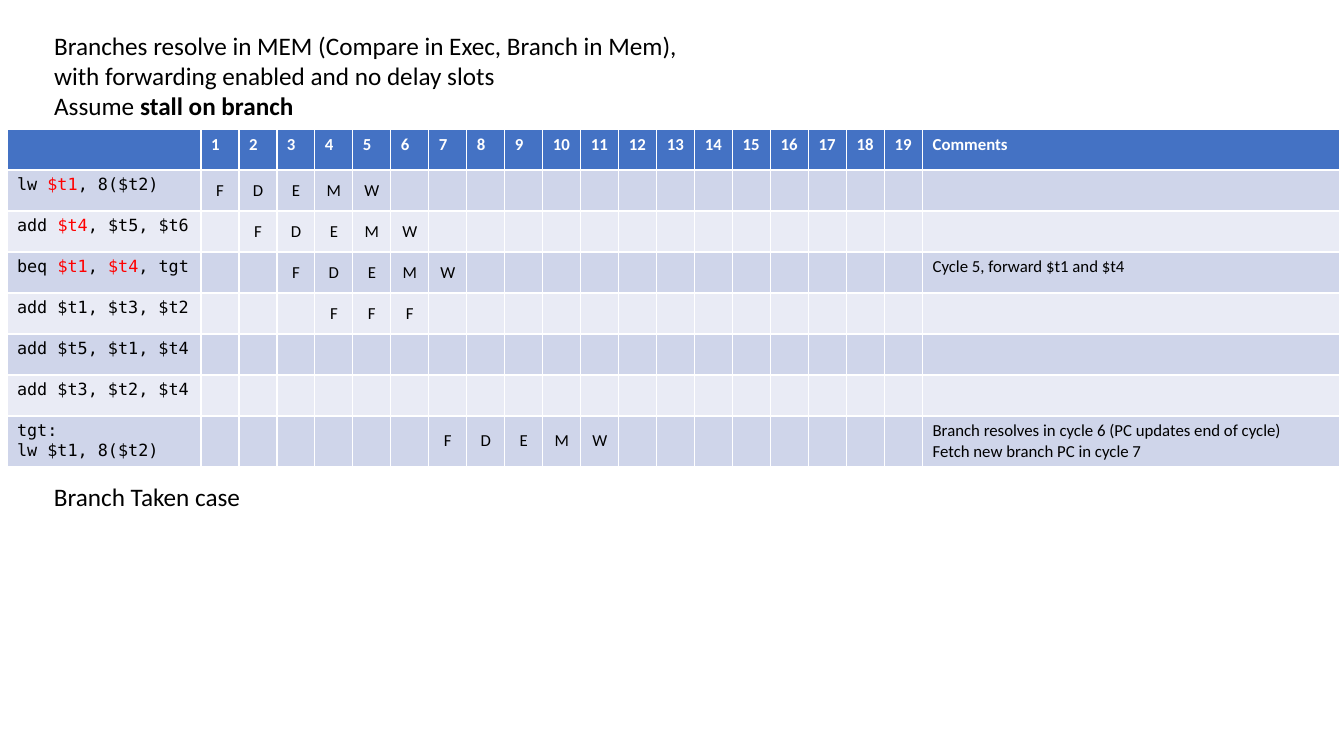
from pptx import Presentation
from pptx.dml.color import RGBColor
from pptx.enum.text import MSO_ANCHOR as Anchor, MSO_AUTO_SIZE as AutoSize, PP_ALIGN as Align
from pptx.util import Emu, Pt

# Asterisks enclose the accented part of a line.
HEADING = ("Branches resolve in MEM (Compare in Exec, Branch in Mem), \n"
           "with forwarding enabled and no delay slots\n"
           "Assume *stall on branch*")
CAPTION = "Branch Taken case"
CYCLES = 19
# instruction, first cycle, stages, comment
PIPELINE = [
    ("lw *$t1*, 8($t2)", 1, "FDEMW", ""),
    ("add *$t4*, $t5, $t6", 2, "FDEMW", ""),
    ("beq *$t1*, *$t4*, tgt", 3, "FDEMW", "Cycle 5, forward $t1 and $t4"),
    ("add $t1, $t3, $t2", 4, "FFF", ""),
    ("add $t5, $t1, $t4", 1, "", ""),
    ("add $t3, $t2, $t4", 1, "", ""),
    ("tgt: \nlw $t1, 8($t2)", 7, "FDEMW",
     "Branch resolves in cycle 6 (PC updates end of cycle)\n"
     "Fetch new branch PC in cycle 7"),
]
COLORS = {"header": "4472C4", "odd": "CFD5EA", "even": "E9EBF5",
          "white": "FFFFFF", "black": "000000", "red": "FF0000"}
SANS, MONO = "Calibri", "DejaVu Sans Mono"

# Lengths in px
PAGE = (1344, 756)
HEADING_BOX = (44, 25, 656, 102)
CAPTION_BOX = (44, 476, 209, 40)
TABLE_LEFT, TABLE_TOP, ROW_HEIGHT = 7, 129, 41
COLUMN_WIDTHS = [194] + [38] * CYCLES + [417]


def px(length):
    return Emu(round(length * 914400 / 100.8))


def color(name):
    return RGBColor.from_string(COLORS[name])


def write(para, text, size, font=SANS, ink="black", accent=None):
    """Fill a paragraph; accent formats the font of each part between asterisks."""
    para.font.size = Pt(size)
    para.font.name = font
    para.font.color.rgb = color(ink)
    for part, piece in enumerate(text.split("*")):
        for line, words in enumerate(piece.split("\n")):
            if line:
                para.add_line_break()
            if words:
                span = para.add_run()
                span.text = words
                if part % 2:
                    accent(span.font)


def make_bold(font):
    font.bold = True


def make_red(font):
    font.color.rgb = color("red")


def set_text_box(box, place, text):
    box.left, box.top, box.width, box.height = map(px, place)
    frame = box.text_frame
    frame.word_wrap = False
    frame.auto_size = AutoSize.SHAPE_TO_FIT_TEXT
    frame.vertical_anchor = Anchor.TOP
    para = frame.paragraphs[0]
    para.alignment = Align.LEFT
    write(para, text, 18, accent=make_bold)


def fill_cell(cell, fill, text, **style):
    cell.fill.solid()
    cell.fill.fore_color.rgb = color(fill)
    write(cell.text_frame.paragraphs[0], text, 12, **style)


def add_pipeline_table(page):
    rows, columns = len(PIPELINE) + 1, len(COLUMN_WIDTHS)
    table = page.shapes.add_table(
        rows, columns, px(TABLE_LEFT), px(TABLE_TOP),
        px(sum(COLUMN_WIDTHS)), px(rows * ROW_HEIGHT)).table
    for column, width in zip(table.columns, COLUMN_WIDTHS):
        column.width = px(width)
    for row in table.rows:
        row.height = px(ROW_HEIGHT)

    titles = ["", *map(str, range(1, CYCLES + 1)), "Comments"]
    for column, title in enumerate(titles):
        cell = table.cell(0, column)
        fill_cell(cell, "header", title, ink="white")
        cell.text_frame.paragraphs[0].font.bold = True

    for row, (instruction, start, stages, comment) in enumerate(PIPELINE, 1):
        fill = "odd" if row % 2 else "even"
        fill_cell(table.cell(row, 0), fill, instruction, font=MONO, accent=make_red)
        for cycle in range(1, CYCLES + 1):
            cell = table.cell(row, cycle)
            step = cycle - start
            fill_cell(cell, fill, stages[step] if 0 <= step < len(stages) else "")
            cell.vertical_anchor = Anchor.MIDDLE
            cell.text_frame.paragraphs[0].alignment = Align.CENTER
        fill_cell(table.cell(row, columns - 1), fill, comment)


def main():
    deck = Presentation()
    deck.slide_width, deck.slide_height = map(px, PAGE)
    page = deck.slides.add_slide(deck.slide_layouts.get_by_name("Title Only"))
    add_pipeline_table(page)
    set_text_box(page.shapes.title, HEADING_BOX, HEADING)
    caption = page.shapes.add_textbox(*map(px, CAPTION_BOX))
    set_text_box(caption, CAPTION_BOX, CAPTION)
    deck.save("out.pptx")


if __name__ == "__main__":
    main()
